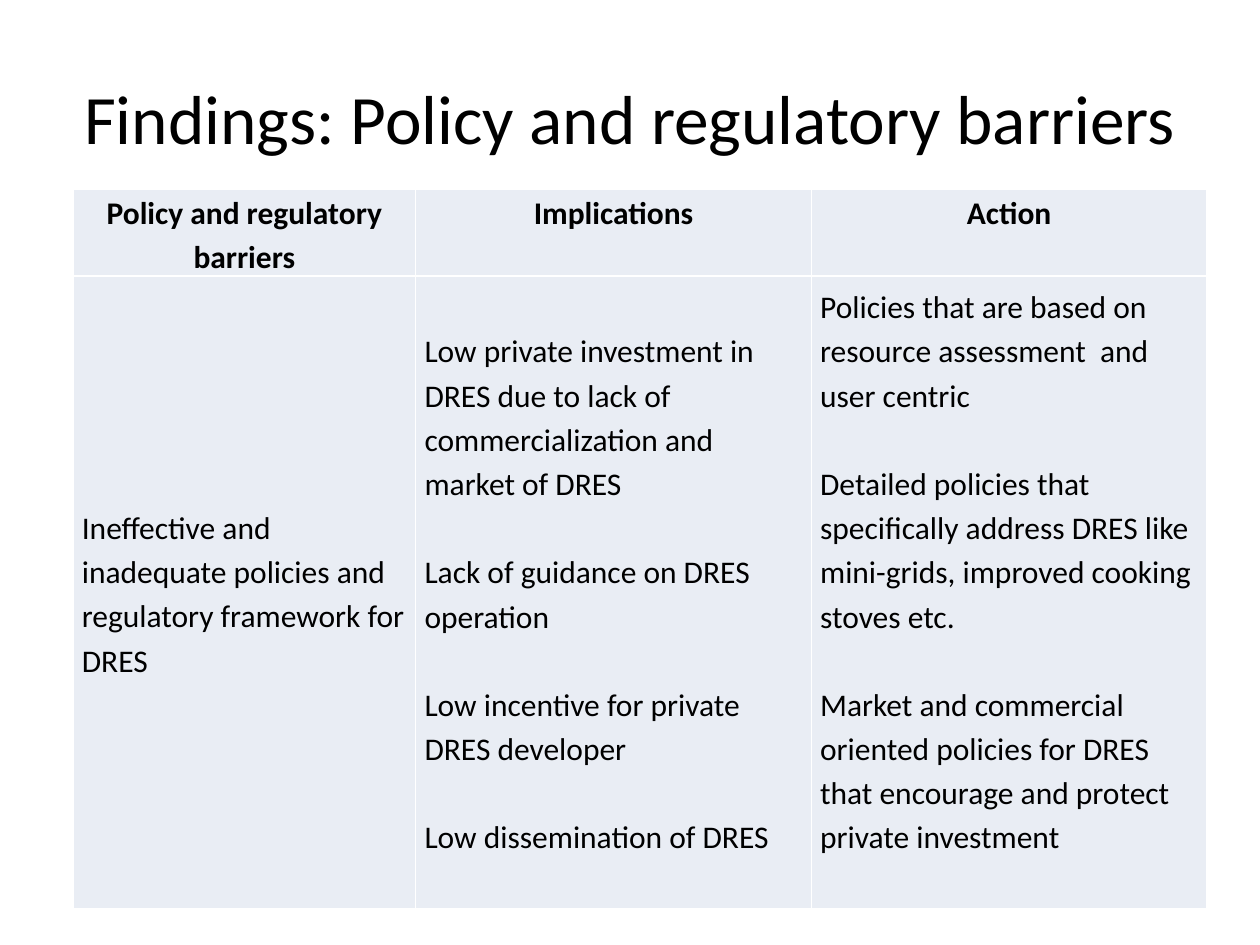
from dataclasses import dataclass

from lxml.etree import SubElement
from pptx import Presentation
from pptx.dml.color import RGBColor
from pptx.enum.text import MSO_ANCHOR, PP_ALIGN
from pptx.oxml.ns import qn
from pptx.util import Inches, Pt


@dataclass(frozen=True)
class Theme:
    font: str = "Calibri"
    text: str = "000000"
    cell: str = "E9EDF4"
    border: str = "FFFFFF"
    title_size: float = 39.6
    body_size: float = 18
    line_spacing: float = 1.15
    paragraph_gap: float = 25.2  # one body line


class SlideBuilder:
    def __init__(self, prs, theme):
        self.theme = theme
        self.s = prs.slides.add_slide(prs.slide_layouts[6])

    def set_text(self, tf, paragraphs, size, align, bold=False, spacing=1.0):
        tf.text = "\n".join(paragraphs)
        for i, p in enumerate(tf.paragraphs):
            p.alignment = align
            p.line_spacing = spacing
            if i:
                p.space_before = Pt(self.theme.paragraph_gap)
            for r in p.runs:
                r.font.name = self.theme.font
                r.font.size = Pt(size)
                r.font.bold = bold
                r.font.color.rgb = RGBColor.from_string(self.theme.text)

    def title(self, text, left, top, width, height):
        sp = self.s.shapes.add_textbox(
            Inches(left), Inches(top), Inches(width), Inches(height))
        tf = sp.text_frame
        tf.word_wrap = True
        tf.vertical_anchor = MSO_ANCHOR.MIDDLE
        self.set_text(tf, [text], self.theme.title_size, PP_ALIGN.CENTER)

    def borders(self, cell):
        tc_pr = cell._tc.get_or_add_tcPr()
        for side in ("lnL", "lnR", "lnT", "lnB"):
            ln = SubElement(tc_pr, qn(f"a:{side}"), w=str(Pt(1)))
            fill = SubElement(ln, qn("a:solidFill"))
            SubElement(fill, qn("a:srgbClr"), val=self.theme.border)

    def cell(self, cell, paragraphs, header):
        cell.margin_left = cell.margin_right = Inches(0.07)
        cell.margin_top = cell.margin_bottom = 0
        cell.vertical_anchor = MSO_ANCHOR.TOP if header else MSO_ANCHOR.MIDDLE
        self.borders(cell)
        cell.fill.solid()
        cell.fill.fore_color.rgb = RGBColor.from_string(self.theme.cell)
        self.set_text(cell.text_frame, paragraphs, self.theme.body_size,
                      PP_ALIGN.CENTER if header else PP_ALIGN.LEFT,
                      bold=header, spacing=self.theme.line_spacing)

    def table(self, rows, left, top, widths, heights):
        table = self.s.shapes.add_table(
            len(heights), len(widths), Inches(left), Inches(top),
            Inches(sum(widths)), Inches(sum(heights))).table
        table.first_row = table.horz_banding = False
        for column, width in zip(table.columns, widths):
            column.width = Inches(width)
        for row, height in zip(table.rows, heights):
            row.height = Inches(height)
        for i, row in enumerate(rows):
            for j, paragraphs in enumerate(row):
                self.cell(table.cell(i, j), paragraphs, header=i == 0)
        return table


BARRIERS = [
    [["Policy and regulatory barriers"], ["Implications"], ["Action"]],
    [
        ["Ineffective and inadequate policies and regulatory framework for DRES"],
        ["Low private investment in DRES due to lack of commercialization and "
         "market of DRES",
         "Lack of guidance on DRES operation",
         "Low incentive for private DRES developer",
         "Low dissemination of DRES"],
        ["Policies that are based on resource assessment  and user centric",
         "Detailed policies that specifically address DRES like mini-grids, "
         "improved cooking stoves etc.",
         "Market and commercial oriented policies for DRES that encourage and "
         "protect private investment"],
    ],
]


def main():
    prs = Presentation()
    prs.slide_width, prs.slide_height = Inches(10), Inches(7.5)
    slide = SlideBuilder(prs, Theme())

    # Heading
    slide.title("Findings: Policy and regulatory barriers", 0.5, 0.3, 9, 1.25)

    # Barriers, their implications and the actions they call for
    table = slide.table(BARRIERS, 0.58, 1.5, [2.72, 3.14, 3.14], [0.65, 5.02])
    # The actions sit half a line above the middle
    table.cell(1, 2).margin_bottom = Inches(0.35)

    prs.save("out.pptx")


if __name__ == "__main__":
    main()
